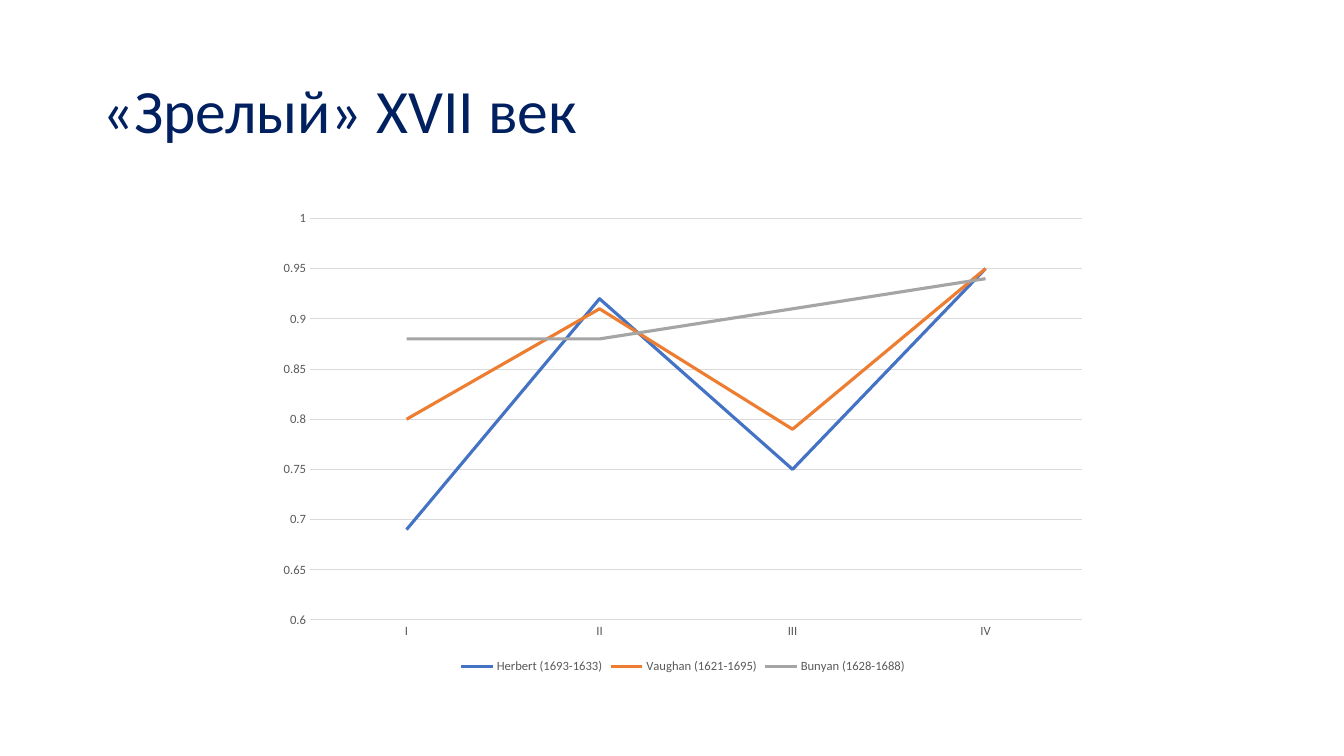
"""Build a slide with a line chart comparing three seventeenth-century authors."""
import pptx
import pptx.chart.data
import pptx.dml.color
import pptx.enum.chart
import pptx.enum.text
import pptx.util
from pptx.util import Cm, Pt

NAVY = pptx.dml.color.RGBColor(0x00, 0x20, 0x60)
BLUE = pptx.dml.color.RGBColor(0x44, 0x72, 0xC4)
ORANGE = pptx.dml.color.RGBColor(0xED, 0x7D, 0x31)
GRAY = pptx.dml.color.RGBColor(0xA5, 0xA5, 0xA5)
LABEL = pptx.dml.color.RGBColor(0x59, 0x59, 0x59)
GRID = pptx.dml.color.RGBColor(0xD9, 0xD9, 0xD9)

FONT = "Calibri"
TITLE = "«Зрелый» XVII век"
CATEGORIES = ["I", "II", "III", "IV"]
AUTHORS = [
    ("Herbert (1693-1633)", (0.69, 0.92, 0.75, 0.95), BLUE),
    ("Vaughan (1621-1695)", (0.80, 0.91, 0.79, 0.95), ORANGE),
    ("Bunyan (1628-1688)", (0.88, 0.88, 0.91, 0.94), GRAY),
]
TITLE_BOX = (Cm(2.33), Cm(1.01), Cm(29.21), Cm(3.68))
CHART_BOX = (Cm(6.73), Cm(5.08), Cm(20.96), Cm(12.01))


def style_font(font, size, color):
    """Set typeface, size and colour of a font."""
    font.name = FONT
    font.size = Pt(size)
    font.bold = False
    font.color.rgb = color


def style_line(line, color, width):
    """Set colour and width in points of a line."""
    line.color.rgb = color
    line.width = Pt(width)


def write_text(box, text, *, size, color, spacing):
    """Write one left-aligned, vertically centred paragraph into a box."""
    frame = box.text_frame
    frame.word_wrap = True
    frame.vertical_anchor = pptx.enum.text.MSO_ANCHOR.MIDDLE
    para = frame.paragraphs[0]
    para.alignment = pptx.enum.text.PP_ALIGN.LEFT
    para.line_spacing = spacing
    span = para.add_run()
    span.text = text
    style_font(span.font, size, color)


def add_title(page):
    """Place and fill the title placeholder."""
    title = page.shapes.title
    title.left, title.top, title.width, title.height = TITLE_BOX
    write_text(title, TITLE, size=44, color=NAVY, spacing=0.9)


def add_line_chart(page):
    """Add the line chart with its axes, legend and series."""
    data = pptx.chart.data.CategoryChartData(number_format="General")
    data.categories = CATEGORIES
    for name, values, _ in AUTHORS:
        data.add_series(name, values)
    kind = pptx.enum.chart.XL_CHART_TYPE.LINE
    chart = page.shapes.add_chart(kind, *CHART_BOX, data).chart
    chart.has_title = False
    chart.font.name = FONT
    chart.font.size = Pt(10)

    chart.has_legend = True
    chart.legend.position = pptx.enum.chart.XL_LEGEND_POSITION.BOTTOM
    chart.legend.include_in_layout = False
    style_font(chart.legend.font, 9, LABEL)

    for axis in (chart.category_axis, chart.value_axis):
        axis.major_tick_mark = pptx.enum.chart.XL_TICK_MARK.NONE
        axis.minor_tick_mark = pptx.enum.chart.XL_TICK_MARK.NONE
        style_font(axis.tick_labels.font, 9, LABEL)
    style_line(chart.category_axis.format.line, GRID, 0.75)
    scale = chart.value_axis
    scale.minimum_scale, scale.maximum_scale, scale.major_unit = 0.6, 1, 0.05
    scale.format.line.fill.background()
    scale.has_major_gridlines = True
    style_line(scale.major_gridlines.format.line, GRID, 0.75)

    plot = chart.plots[0]
    plot.vary_by_categories = False
    for series, (_, _, color) in zip(plot.series, AUTHORS):
        series.smooth = False
        series.marker.style = pptx.enum.chart.XL_MARKER_STYLE.NONE
        style_line(series.format.line, color, 2.25)


def main():
    """Create and save the deck."""
    deck = pptx.Presentation()
    deck.slide_width, deck.slide_height = Cm(33.87), Cm(19.05)
    page = deck.slides.add_slide(deck.slide_layouts[5])
    add_title(page)
    add_line_chart(page)
    deck.save("out.pptx")


if __name__ == "__main__":
    main()
